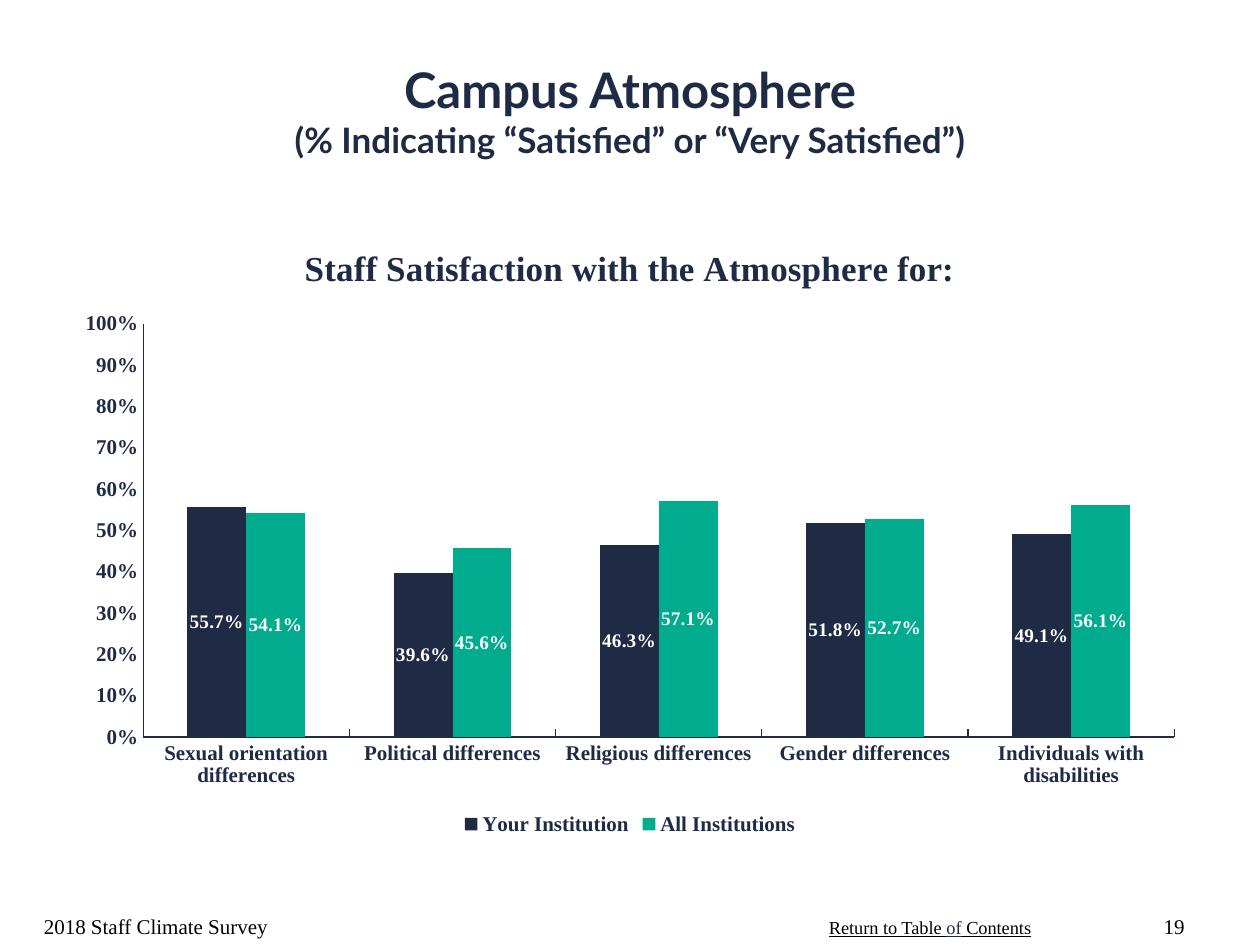
from dataclasses import dataclass

from pptx import Presentation
from pptx.chart.data import CategoryChartData
from pptx.dml.color import RGBColor
from pptx.enum.chart import (XL_CHART_TYPE, XL_LABEL_POSITION as LabelPos,
                             XL_LEGEND_POSITION as LegendPos, XL_TICK_MARK as Tick)
from pptx.enum.text import MSO_ANCHOR as Anchor, PP_ALIGN as Align
from pptx.util import Inches, Pt


@dataclass(frozen=True)
class Theme:
    navy: RGBColor = RGBColor(0x1F, 0x2A, 0x44)
    green: RGBColor = RGBColor(0x00, 0xAB, 0x8E)
    black: RGBColor = RGBColor(0, 0, 0)
    white: RGBColor = RGBColor(255, 255, 255)
    heading: str = "Lato"
    body: str = "Times New Roman"
    title: float = 28
    subtitle: float = 20
    chart_title: float = 20
    axis: float = 12
    label: float = 11
    footer: float = 12
    link: float = 10.5


theme = Theme()


def style(font, size, color, name=theme.body, bold=False):
    font.size, font.name, font.bold = Pt(size), name, bold
    font.color.rgb = color


def add_text(s, box, text, size, align=Align.LEFT, anchor=Anchor.BOTTOM):
    tf = s.shapes.add_textbox(*map(Inches, box)).text_frame
    tf.word_wrap = True
    tf.vertical_anchor = anchor
    p = tf.paragraphs[0]
    p.alignment = align
    for part in text:
        r = p.add_run()
        r.text = part
        style(r.font, size, theme.black)
    return tf


prs = Presentation()
prs.slide_width, prs.slide_height = Inches(10), Inches(7.5)
s = prs.slides.add_slide(prs.slide_layouts[5])

# Title
title = s.shapes.title
title.left, title.top, title.width, title.height = map(Inches, (0, 0.25, 10, 1.25))
tf = title.text_frame
tf.text = "Campus Atmosphere\v(% Indicating “Satisfied” or “Very Satisfied”)"
tf.vertical_anchor = Anchor.MIDDLE
p = tf.paragraphs[0]
p.alignment = Align.CENTER
for r, size in zip(p.runs, (theme.title, theme.subtitle)):
    style(r.font, size, theme.navy, theme.heading, True)

# Chart
data = CategoryChartData(number_format="0.0%")
data.categories = ["Sexual orientation differences", "Political differences",
                   "Religious differences", "Gender differences",
                   "Individuals with disabilities"]
data.add_series("Your Institution", (0.557, 0.396, 0.463, 0.518, 0.491))
data.add_series("All Institutions", (0.541, 0.456, 0.571, 0.527, 0.561))
chart = s.shapes.add_chart(XL_CHART_TYPE.COLUMN_CLUSTERED,
                           *map(Inches, (0.5, 1.75, 9, 4.92)), data).chart
style(chart.font, theme.axis, theme.navy, bold=True)

tf = chart.chart_title.text_frame
tf.text = "Staff Satisfaction with the Atmosphere for:"
style(tf.paragraphs[0].runs[0].font, theme.chart_title, theme.navy, bold=True)

chart.has_legend = True
chart.legend.position = LegendPos.BOTTOM
chart.legend.include_in_layout = False
style(chart.legend.font, theme.axis, theme.navy, bold=True)

for axis, tick in ((chart.category_axis, Tick.INSIDE), (chart.value_axis, Tick.NONE)):
    axis.major_tick_mark, axis.minor_tick_mark = tick, Tick.NONE
    axis.has_major_gridlines = False
    axis.format.line.color.rgb = theme.navy
    axis.format.line.width = Pt(0.75)
    style(axis.tick_labels.font, theme.axis, theme.navy, bold=True)
axis = chart.value_axis
axis.minimum_scale, axis.maximum_scale, axis.major_unit = 0, 1, 0.1
axis.tick_labels.number_format = "0%"
axis.tick_labels.number_format_is_linked = False

plot = chart.plots[0]
plot.gap_width, plot.overlap = 150, 0
plot.vary_by_categories = False
for series, color in zip(plot.series, (theme.navy, theme.green)):
    series.format.fill.solid()
    series.format.fill.fore_color.rgb = color
    labels = series.data_labels
    labels.show_value = True
    labels.position = LabelPos.CENTER
    labels.number_format = "0.0%"
    labels.number_format_is_linked = False
    style(labels.font, theme.label, theme.white, bold=True)

# Footer
add_text(s, (0.25, 7, 3.17, 0.5), ["2018 Staff Climate Survey"], theme.footer)
add_text(s, (9, 7, 0.5, 0.5), ["19"], theme.footer, Align.RIGHT)
tf = add_text(s, (6.48, 7.22, 1.82, 0.28), ["Return to Table ", "of", " Contents"],
              theme.link, anchor=Anchor.TOP)
tf.word_wrap = False
runs = tf.paragraphs[0].runs
for r in runs:
    r.font.underline = True
runs[1].font.color.rgb = theme.navy

prs.save("out.pptx")
